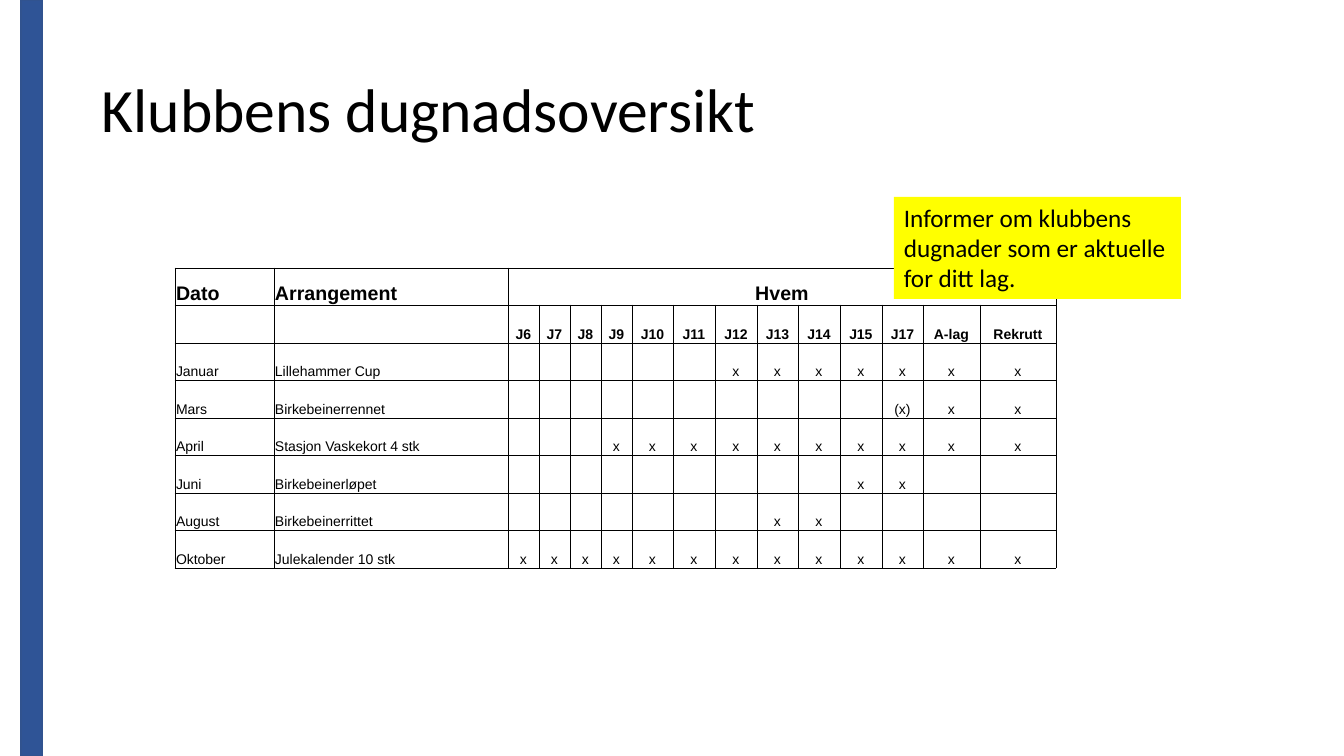
from lxml.etree import SubElement
from pptx import Presentation
from pptx.dml.color import RGBColor
from pptx.enum.shapes import MSO_SHAPE
from pptx.enum.text import MSO_ANCHOR, PP_ALIGN
from pptx.oxml.ns import qn
from pptx.util import Emu, Pt

SCALE = 914400 / 100.8
COLORS = {
    "stripe": "2F5496",
    "stripe_edge": "31538F",
    "note": "FFFF00",
    "text": "000000",
    "grid": "000000",
}
COLUMN_WIDTHS = [99, 234] + [31] * 4 + [41, 42, 42, 41, 42, 42, 41, 57, 76]
ROW_HEIGHTS = [37, 38] * 4
GROUPS = ["J6", "J7", "J8", "J9", "J10", "J11", "J12", "J13", "J14", "J15", "J17", "A-lag", "Rekrutt"]
EVENTS = [
    ("Januar", "Lillehammer Cup", [""] * 6 + ["x"] * 7),
    ("Mars", "Birkebeinerrennet", [""] * 10 + ["(x)", "x", "x"]),
    ("April", "Stasjon Vaskekort 4 stk", [""] * 3 + ["x"] * 10),
    ("Juni", "Birkebeinerløpet", [""] * 9 + ["x"] * 2 + [""] * 2),
    ("August", "Birkebeinerrittet", [""] * 7 + ["x"] * 2 + [""] * 4),
    ("Oktober", "Julekalender 10 stk", ["x"] * 13),
]


def px(length):
    return Emu(round(length * SCALE))


def color(name):
    return RGBColor.from_string(COLORS[name])


def write_text(frame, text, size, font="Calibri", bold=False, align=PP_ALIGN.LEFT, spacing=None):
    paragraph = frame.paragraphs[0]
    paragraph.alignment = align
    if spacing:
        paragraph.line_spacing = spacing
    if text:
        run = paragraph.add_run()
        run.text = text
        run.font.size = Pt(size)
        run.font.name = font
        run.font.bold = bold
        run.font.color.rgb = color("text")


class SlideBuilder:
    def __init__(self, slide):
        self.slide = slide

    def rectangle(self, left, top, width, height, fill, edge=None):
        shape = self.slide.shapes.add_shape(MSO_SHAPE.RECTANGLE, px(left), px(top), px(width), px(height))
        shape.shadow.inherit = False
        shape.fill.solid()
        shape.fill.fore_color.rgb = color(fill)
        if edge:
            shape.line.color.rgb = color(edge)
            shape.line.width = Pt(1)
        else:
            shape.line.fill.background()
        return shape

    def title(self, text, left, top, width, height):
        shape = self.slide.shapes.add_textbox(px(left), px(top), px(width), px(height))
        shape.text_frame.word_wrap = True
        shape.text_frame.vertical_anchor = MSO_ANCHOR.MIDDLE
        write_text(shape.text_frame, text, 44, spacing=0.9)

    def note(self, text, left, top, width, height):
        shape = self.rectangle(left, top, width, height, "note")
        shape.text_frame.word_wrap = True
        shape.text_frame.vertical_anchor = MSO_ANCHOR.TOP
        write_text(shape.text_frame, text, 18)

    def cell(self, cell, text, **text_format):
        cell.margin_left = cell.margin_right = cell.margin_top = px(1)
        cell.margin_bottom = 0
        cell.vertical_anchor = MSO_ANCHOR.BOTTOM
        properties = cell._tc.get_or_add_tcPr()
        for side in ("a:lnL", "a:lnR", "a:lnT", "a:lnB"):
            border = SubElement(properties, qn(side), w=str(Pt(0.5)))
            fill = SubElement(border, qn("a:solidFill"))
            SubElement(fill, qn("a:srgbClr"), val=COLORS["grid"])
        cell.fill.background()
        write_text(cell.text_frame, text, font="Arial", **text_format)

    def table(self, rows, left, top):
        width, height = sum(COLUMN_WIDTHS), sum(ROW_HEIGHTS)
        frame = self.slide.shapes.add_table(
            len(rows), len(COLUMN_WIDTHS), px(left), px(top), px(width), px(height)
        )
        table = frame.table
        table.first_row = table.horz_banding = False
        for column, column_width in zip(table.columns, COLUMN_WIDTHS):
            column.width = px(column_width)
        for row, row_height in zip(table.rows, ROW_HEIGHTS):
            row.height = px(row_height)
        for row_index, row in enumerate(rows):
            for column_index, text in enumerate(row):
                self.cell(
                    table.cell(row_index, column_index),
                    text,
                    size=14 if row_index == 0 else 10,
                    bold=row_index < 2,
                    align=PP_ALIGN.LEFT if column_index < 2 else PP_ALIGN.CENTER,
                )
        table.cell(0, 2).merge(table.cell(0, len(COLUMN_WIDTHS) - 1))


def main():
    presentation = Presentation()
    presentation.slide_width = px(1344)
    presentation.slide_height = px(756)
    builder = SlideBuilder(presentation.slides.add_slide(presentation.slide_layouts[6]))

    builder.rectangle(21, 0, 21, 756, "stripe", "stripe_edge")
    builder.title("Klubbens dugnadsoversikt", 92, 40, 1159, 146)
    header = ["Dato", "Arrangement", "Hvem"] + [""] * (len(GROUPS) - 1)
    events = [[month, event, *marks] for month, event, marks in EVENTS]
    builder.table([header, ["", "", *GROUPS], *events], 175, 268)
    builder.note("Informer om klubbens dugnader som er aktuelle for ditt lag.", 894, 197, 287, 102)

    presentation.save("out.pptx")


if __name__ == "__main__":
    main()
